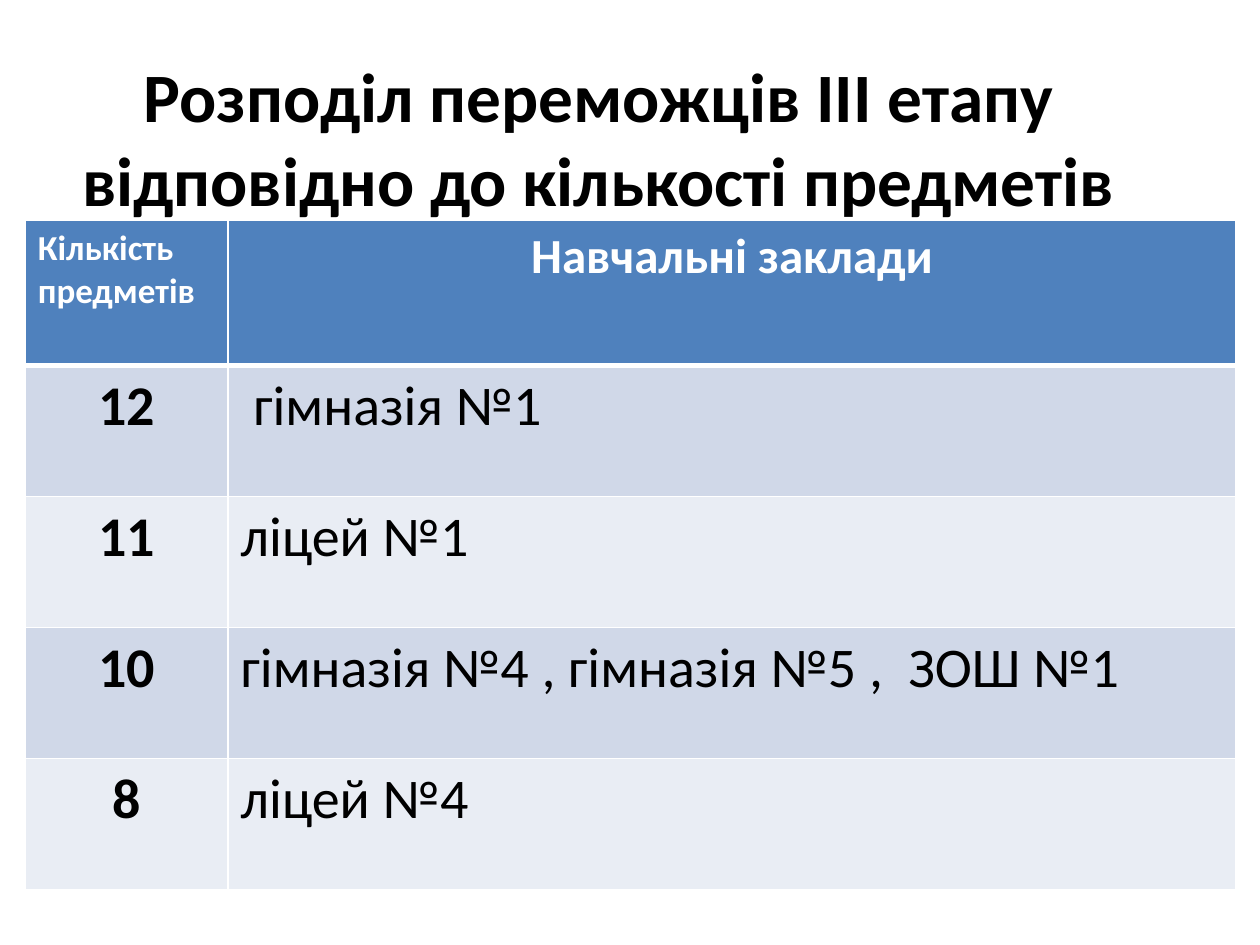
from lxml.etree import SubElement
from pptx import Presentation
from pptx.dml.color import RGBColor
from pptx.enum.text import MSO_ANCHOR, PP_ALIGN
from pptx.oxml.ns import qn
from pptx.util import Inches, Pt

BLACK = RGBColor(0x00, 0x00, 0x00)
WHITE = RGBColor(0xFF, 0xFF, 0xFF)
BLUE = RGBColor(0x4F, 0x81, 0xBD)
BANDS = RGBColor(0xD0, 0xD8, 0xE8), RGBColor(0xE9, 0xED, 0xF4)

TITLE = "Розподіл переможців ІІІ етапу відповідно до кількості предметів"
HEADS = [("Кількість предметів", 20, PP_ALIGN.LEFT),
         ("Навчальні заклади", 28, PP_ALIGN.CENTER)]
SCHOOLS = [
    ("12", " гімназія №1"),
    ("11", "ліцей №1"),
    ("10", "гімназія №4 , гімназія №5 ,  ЗОШ №1"),
    ("8", "ліцей №4"),
]


def write(frame, text, size=32, color=BLACK, bold=True, align=PP_ALIGN.LEFT):
    frame.word_wrap = True
    para = frame.paragraphs[0]
    para.alignment = align
    run = para.add_run()
    run.text = text
    font = run.font
    font.name, font.size, font.bold = "Calibri", Pt(size), bold
    font.color.rgb = color


def add_borders(cell, top=1, bottom=1):
    """Draw white lines, widths in points; call before the cell is filled."""
    props = cell._tc.get_or_add_tcPr()
    for side, width in zip("LRTB", (1, 1, top, bottom)):
        line = SubElement(props, qn(f"a:ln{side}"), w=str(Pt(width)))
        fill = SubElement(line, qn("a:solidFill"))
        SubElement(fill, qn("a:srgbClr"), val=str(WHITE))


def paint(cell, color):
    cell.fill.solid()
    cell.fill.fore_color.rgb = color


def add_title(slide, left, top, width, height):
    frame = slide.shapes.add_textbox(left, top, width, height).text_frame
    frame.vertical_anchor = MSO_ANCHOR.MIDDLE
    write(frame, TITLE, size=39.6, align=PP_ALIGN.CENTER)


def add_results(slide, left, top, width, height):
    count = len(SCHOOLS) + 1
    table = slide.shapes.add_table(count, 2, left, top, width, height).table
    first = Inches(1.61)
    table.columns[0].width, table.columns[1].width = first, width - first
    head = Inches(1.15)
    for row in table.rows:
        row.height = (height - head) // len(SCHOOLS)
    table.rows[0].height = head

    for col, (text, size, align) in enumerate(HEADS):
        cell = table.cell(0, col)
        add_borders(cell, bottom=3)
        paint(cell, BLUE)
        write(cell.text_frame, text, size=size, color=WHITE, align=align)

    for row, texts in enumerate(SCHOOLS, start=1):
        for col, text in enumerate(texts):
            cell = table.cell(row, col)
            add_borders(cell, top=3 if row == 1 else 1)
            paint(cell, BANDS[(row - 1) % 2])
            write(cell.text_frame, text, bold=col == 0,
                  align=PP_ALIGN.LEFT if col else PP_ALIGN.CENTER)


def main():
    deck = Presentation()
    deck.slide_width, deck.slide_height = Inches(10), Inches(7.5)
    slide = deck.slides.add_slide(deck.slide_layouts[6])
    add_title(slide, Inches(0.5), Inches(0.29), Inches(8.5), Inches(1.59))
    add_results(slide, Inches(0.2), Inches(1.75), Inches(9.61), Inches(5.31))
    deck.save("out.pptx")


if __name__ == "__main__":
    main()
